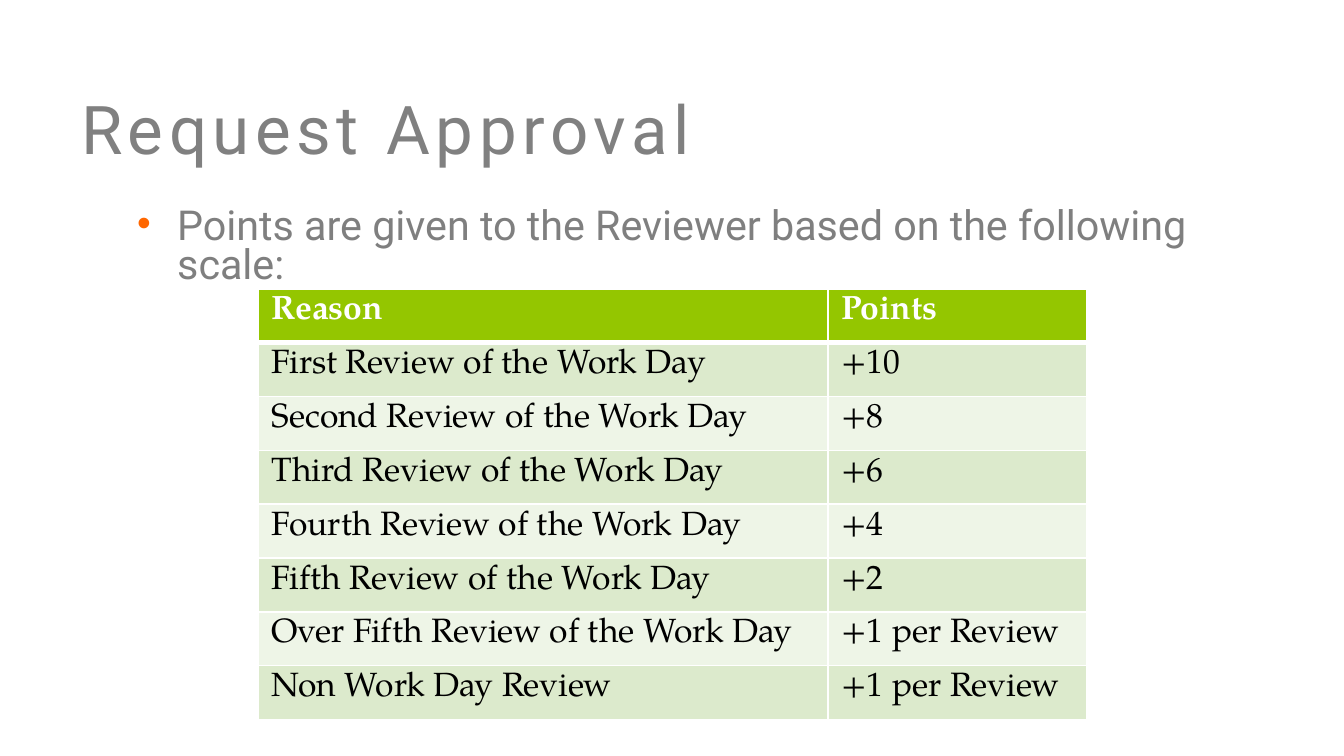
from lxml.etree import SubElement as Sub
from pptx import Presentation
from pptx.dml.color import RGBColor as RGB
from pptx.oxml.ns import qn
from pptx.util import Emu, Pt

WHITE = RGB(0xFF, 0xFF, 0xFF)
BLACK = RGB(0, 0, 0)
TITLE = RGB(0x80, 0x80, 0x80)
BODY = RGB(0x7F, 0x7F, 0x7F)
ORANGE = RGB(0xFF, 0x67, 0x00)
GREEN = RGB(0x94, 0xC6, 0x00)
BANDS = [RGB(0xEE, 0xF5, 0xE7), RGB(0xDC, 0xEA, 0xCC)]
SANS = "Roboto"
SERIF = "TeX Gyre Pagella"
COLS = [570, 259]
ROW = 51
ROWS = [
    ("Reason", "Points"),
    ("First Review of the Work Day", "+10"),
    ("Second Review of the Work Day", "+8"),
    ("Third Review of the Work Day", "+6"),
    ("Fourth Review of the Work Day", "+4"),
    ("Fifth Review of the Work Day", "+2"),
    ("Over Fifth Review of the Work Day", "+1 per Review"),
    ("Non Work Day Review", "+1 per Review"),
]


def px(n):
    return Emu(round(n * 914400 / 134.4))


def style(para, name, size, color, bold=False):
    font = para.font
    font.name, font.size, font.bold = name, Pt(size), bold
    font.color.rgb = color


def add_text(slide, text, x, y, w, h):
    box = slide.shapes.add_textbox(px(x), px(y), px(w), px(h))
    frame = box.text_frame
    frame.word_wrap = True
    para = frame.paragraphs[0]
    para.text = text
    return frame, para


def add_title(slide):
    frame, para = add_text(slide, "Request Approval", 81, 81, 1207, 126)
    frame.margin_left = frame.margin_right = frame.margin_bottom = 0
    style(para, SANS, 36, TITLE)
    para.runs[0]._r.get_or_add_rPr().set("spc", "300")


def add_bullet(slide):
    text = "Points are given to the Reviewer based on the following scale:"
    para = add_text(slide, text, 124, 202, 1167, 98)[1]
    props = para._p.get_or_add_pPr()
    props.set("marL", str(px(40)))
    props.set("indent", str(px(-40)))
    Sub(Sub(props, qn("a:buClr")), qn("a:srgbClr"), val=str(ORANGE))
    Sub(props, qn("a:buSzPct"), val="95000")
    Sub(props, qn("a:buFont"), typeface="Arial")
    Sub(props, qn("a:buChar"), char="•")
    para.line_spacing = 0.8
    para.space_after = Pt(2)
    style(para, SANS, 22.1, BODY)


def add_edge(cell, side, width):
    props = cell._tc.get_or_add_tcPr()
    line = Sub(props, qn(f"a:ln{side}"), w=str(Pt(width)))
    Sub(Sub(line, qn("a:solidFill")), qn("a:srgbClr"), val=str(WHITE))


def fill_cell(cell, text, row):
    head = row == 0
    cell.text = text
    color = WHITE if head else BLACK
    style(cell.text_frame.paragraphs[0], SERIF, 18, color, head)
    for side in "LRTB":
        thick = (row, side) in ((0, "B"), (1, "T"))
        add_edge(cell, side, 3 if thick else 1)
    cell.fill.solid()
    cell.fill.fore_color.rgb = GREEN if head else BANDS[row % 2]


def add_scale(slide):
    table = slide.shapes.add_table(
        len(ROWS), len(COLS), px(258), px(289), px(sum(COLS)), px(ROW * len(ROWS))
    ).table
    for col, width in zip(table.columns, COLS):
        col.width = px(width)
    for r, texts in enumerate(ROWS):
        table.rows[r].height = px(ROW)
        for c, text in enumerate(texts):
            fill_cell(table.cell(r, c), text, r)


def main():
    deck = Presentation()
    deck.slide_width, deck.slide_height = px(1344), px(756)
    slide = deck.slides.add_slide(deck.slide_layouts[6])
    add_title(slide)
    add_bullet(slide)
    add_scale(slide)
    deck.save("out.pptx")


if __name__ == "__main__":
    main()
